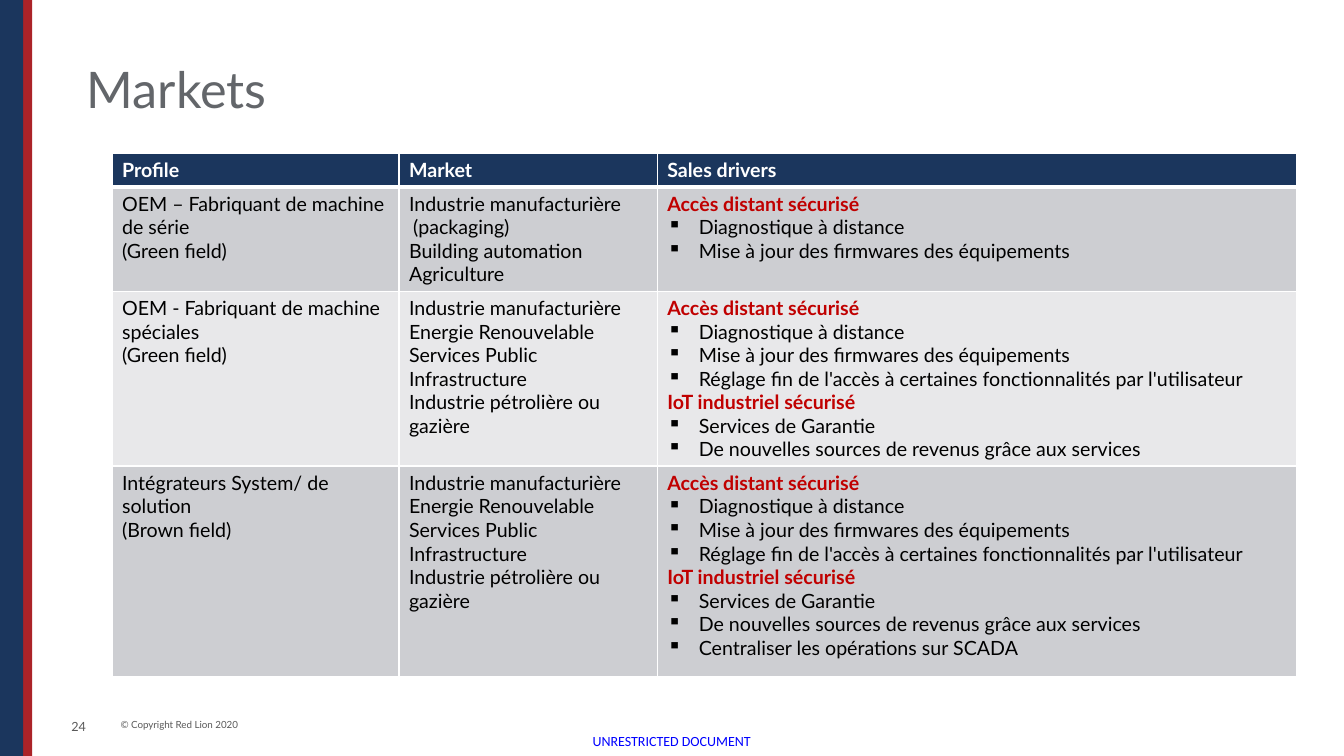
from lxml import etree
from pptx import Presentation
from pptx.dml.color import RGBColor
from pptx.enum import shapes, text
from pptx.oxml import ns
from pptx.util import Pt

NAVY = RGBColor(0x1B, 0x36, 0x5D)
RED = RGBColor(0xAB, 0x23, 0x28)
DRIVER_RED = RGBColor(0xC0, 0x00, 0x00)
TITLE_GREY = RGBColor(0x63, 0x66, 0x6A)
FOOTER_GREY = RGBColor(0x59, 0x59, 0x59)
DARK_BAND = RGBColor(0xCD, 0xCE, 0xD2)
LIGHT_BAND = RGBColor(0xE8, 0xE8, 0xEA)
BLUE = RGBColor(0x00, 0x00, 0xFF)
BLACK = RGBColor(0x00, 0x00, 0x00)
WHITE = RGBColor(0xFF, 0xFF, 0xFF)

# Content: sales drivers map each heading to its bullets
HEADERS = ["Profile", "Market", "Sales drivers"]
REMOTE = "Accès distant sécurisé"
IOT = "IoT industriel sécurisé"
ACCESS = ["Diagnostique à distance", "Mise à jour des firmwares des équipements"]
TUNING = "Réglage fin de l'accès à certaines fonctionnalités par l'utilisateur"
SERVICES = ["Services de Garantie", "De nouvelles sources de revenus grâce aux services"]
SCADA = "Centraliser les opérations sur SCADA"
PACKAGING = "(packaging)"
INDUSTRIES = ["Industrie manufacturière", "Energie Renouvelable", "Services Public",
              "Infrastructure", "Industrie pétrolière ou gazière"]
PROFILES = [
    (["OEM – Fabriquant de machine de série", "(Green field)"],
     ["Industrie manufacturière", PACKAGING, "Building automation", "Agriculture"],
     {REMOTE: ACCESS}),
    (["OEM - Fabriquant de machine spéciales", "(Green field)"],
     INDUSTRIES,
     {REMOTE: ACCESS + [TUNING], IOT: SERVICES}),
    (["Intégrateurs System/ de solution", "(Brown field)"],
     INDUSTRIES,
     {REMOTE: ACCESS + [TUNING], IOT: SERVICES + [SCADA]}),
]

# Layout in points
COLUMNS = [205, 184.5, 456.5]
ROWS = [24, 60.5, 122.5, 150.5]
TABLE_LEFT, TABLE_TOP = 80, 109.5
BULLET_INDENT = 22.5
PACKAGING_INDENT = 3
BARS = [(4.3, 18.7, RED), (0, 16.5, NAVY)]  # left, width, colour

# Text, box, size, font, colour, alignment, anchor, inset
LEFT, CENTER, RIGHT = text.PP_ALIGN.LEFT, text.PP_ALIGN.CENTER, text.PP_ALIGN.RIGHT
TOP, MIDDLE, BOTTOM = text.MSO_ANCHOR.TOP, text.MSO_ANCHOR.MIDDLE, text.MSO_ANCHOR.BOTTOM
LABELS = [
    ("UNRESTRICTED DOCUMENT", (411, 519, 137.5, 21), 10, "Calibri", BLUE, CENTER, MIDDLE, False),
    ("24", (24, 510, 44.5, 29), 9, "Lato", FOOTER_GREY, RIGHT, TOP, True),
    ("© Copyright Red Lion 2020", (79, 510, 111.5, 16), 7, "Lato", FOOTER_GREY, LEFT, TOP, True),
    ("Markets", (55, 0, 861, 88.5), 36, "Lato", TITLE_GREY, LEFT, BOTTOM, True),
]


def style(p, size, color, bold=False, font="Lato"):
    for r in p.runs:
        r.font.name, r.font.size, r.font.bold = font, Pt(size), bold
        r.font.color.rgb = color


def indent(p, left, first=0, bullet=None):
    props = p._p.get_or_add_pPr()
    props.set("marL", str(Pt(left)))
    props.set("indent", str(Pt(first)))
    if bullet:
        etree.SubElement(props, ns.qn("a:buChar")).set("char", bullet)


def border(cell, bottom):
    props = cell._tc.get_or_add_tcPr()
    for i, (side, width) in enumerate([("L", 1), ("R", 1), ("T", 1), ("B", bottom)]):
        ln = etree.Element(ns.qn("a:ln" + side), w=str(Pt(width)))
        fill = etree.SubElement(ln, ns.qn("a:solidFill"))
        etree.SubElement(fill, ns.qn("a:srgbClr")).set("val", str(WHITE))
        props.insert(i, ln)


def fill_cell(cell, lines, fill, color=BLACK, bold=False, bottom=1):
    cell.fill.solid()
    cell.fill.fore_color.rgb = fill
    border(cell, bottom)
    headings = lines if isinstance(lines, dict) else {}
    if headings:
        lines = [t for head, items in headings.items() for t in [head] + items]
    cell.text_frame.text = "\n".join(lines)
    for p in cell.text_frame.paragraphs:
        is_heading = p.text in headings
        if headings and not is_heading:
            indent(p, BULLET_INDENT, -BULLET_INDENT, "▪")
        elif p.text == PACKAGING:
            indent(p, PACKAGING_INDENT)
        style(p, 14, DRIVER_RED if is_heading else color, bold or is_heading)


prs = Presentation()
prs.slide_width, prs.slide_height = Pt(960), Pt(540)
s = prs.slides.add_slide(prs.slide_layouts[6])

# Side bars
for left, width, color in BARS:
    sp = s.shapes.add_shape(shapes.MSO_SHAPE.RECTANGLE, Pt(left), 0, Pt(width), prs.slide_height)
    sp.shadow.inherit = False
    sp.fill.solid()
    sp.fill.fore_color.rgb = color
    sp.line.fill.background()

# Title and footer
for words, box, size, font, color, align, anchor, inset in LABELS:
    tf = s.shapes.add_textbox(*map(Pt, box)).text_frame
    tf.word_wrap = True
    tf.vertical_anchor = anchor
    if not inset:
        tf.margin_left = tf.margin_right = tf.margin_top = tf.margin_bottom = 0
    tf.text = words
    tf.paragraphs[0].alignment = align
    style(tf.paragraphs[0], size, color, font=font)

# Table
table = s.shapes.add_table(len(ROWS), len(COLUMNS), Pt(TABLE_LEFT), Pt(TABLE_TOP),
                           Pt(sum(COLUMNS)), Pt(sum(ROWS))).table
for column, width in zip(table.columns, COLUMNS):
    column.width = Pt(width)
for row, height in zip(table.rows, ROWS):
    row.height = Pt(height)
for c, header in enumerate(HEADERS):
    fill_cell(table.cell(0, c), [header], NAVY, WHITE, True, 3)
for r, profile in enumerate(PROFILES, 1):
    for c, lines in enumerate(profile):
        fill_cell(table.cell(r, c), lines, DARK_BAND if r % 2 else LIGHT_BAND)

prs.save("out.pptx")
